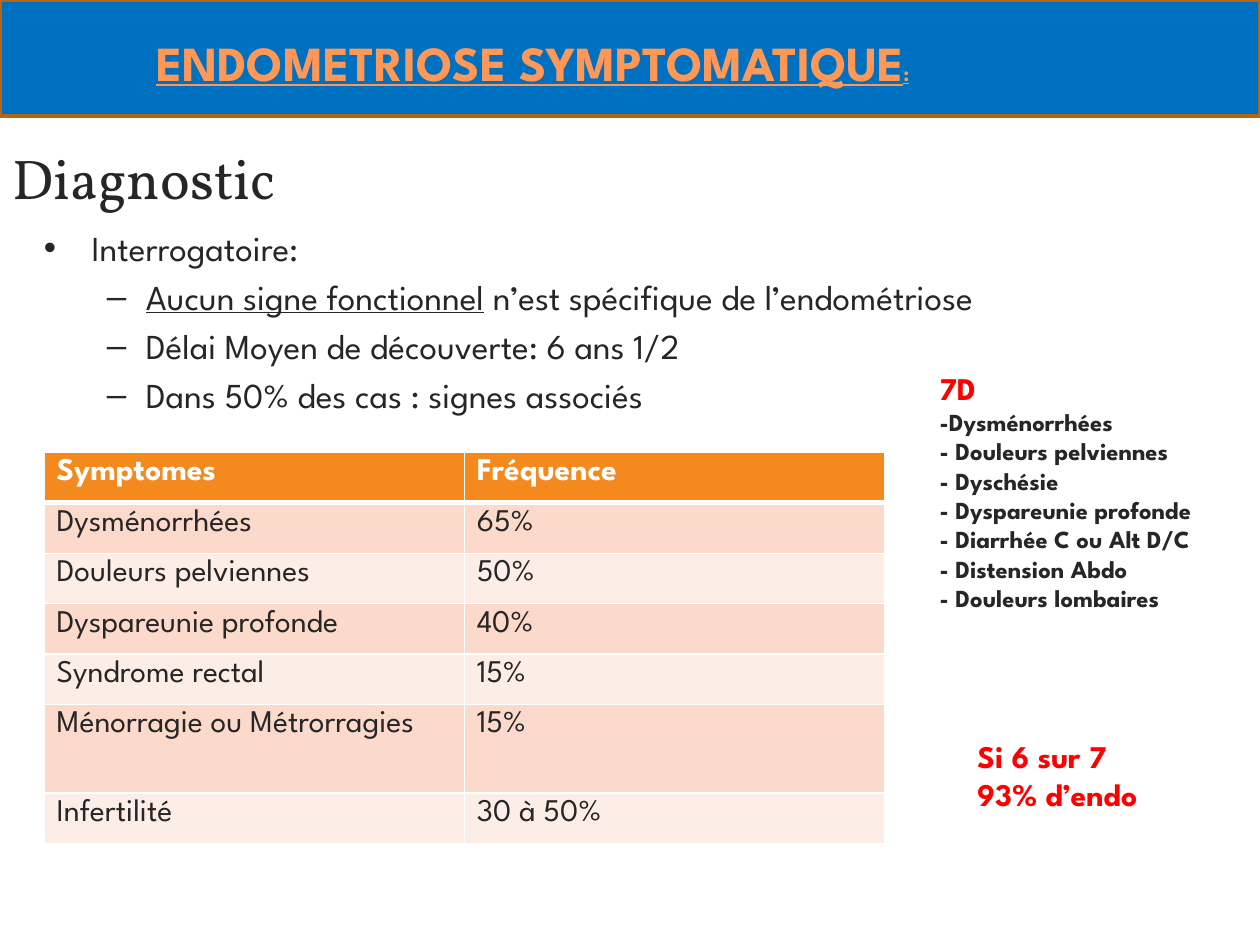
from lxml import etree
from pptx import Presentation
from pptx.dml.color import RGBColor
from pptx.enum import shapes, text
from pptx.oxml import ns
from pptx.util import Inches, Pt

COLORS = {
    "ink": "262626", "white": "FFFFFF", "red": "FF0000", "bar": "0070C0",
    "bar_line": "B56516", "heading": "FF9856", "head_row": "F4891E",
    "odd_row": "FBDACC", "even_row": "FDEDE7",
}
SANS, SERIF = "League Spartan", "Vollkorn"


def rgb(name):
    return RGBColor.from_string(COLORS[name])


def add_run(p, words, size, color="ink", bold=False, underline=False, font=SANS):
    r = p.add_run()
    r.text = words
    r.font.name = font
    r.font.size = Pt(size)
    r.font.bold = bold
    r.font.underline = underline
    r.font.color.rgb = rgb(color)


def add_text(s, box, wrap=True):
    tf = s.shapes.add_textbox(*map(Inches, box)).text_frame
    tf.word_wrap = wrap
    return tf


def paragraphs(tf, items):
    for i, item in enumerate(items):
        yield (tf.add_paragraph() if i else tf.paragraphs[0]), item


def set_bullet(p, char, margin, indent):
    pPr = p._p.get_or_add_pPr()
    pPr.set("marL", str(Inches(margin)))
    pPr.set("indent", str(Inches(indent)))
    etree.SubElement(pPr, ns.qn("a:buFont")).set("typeface", "Arial")
    etree.SubElement(pPr, ns.qn("a:buChar")).set("char", char)


def set_borders(cell, widths):
    tcPr = cell._tc.get_or_add_tcPr()
    for side, width in zip("LRTB", widths):
        ln = etree.SubElement(tcPr, ns.qn(f"a:ln{side}"), w=str(Pt(width)))
        fill = etree.SubElement(ln, ns.qn("a:solidFill"))
        etree.SubElement(fill, ns.qn("a:srgbClr"), val=COLORS["white"])


def add_title(s, box):
    title = s.shapes.title
    title.left, title.top, title.width, title.height = map(Inches, box)
    tf = title.text_frame
    tf.vertical_anchor = text.MSO_ANCHOR.MIDDLE
    p = tf.paragraphs[0]
    p.alignment = text.PP_ALIGN.LEFT
    add_run(p, "Diagnostic", 32, font=SERIF)


def add_header(s, box):
    left, top, width, height = box
    bar = s.shapes.add_shape(shapes.MSO_SHAPE.RECTANGLE, *map(Inches, box))
    bar.shadow.inherit = False
    bar.fill.solid()
    bar.fill.fore_color.rgb = rgb("bar")
    bar.line.color.rgb = rgb("bar_line")
    bar.line.width = Pt(2)
    tf = add_text(s, (left + 1.14, top + 0.21, 6.52, 0.57), wrap=False)
    p = tf.paragraphs[0]
    add_run(p, "ENDOMETRIOSE SYMPTOMATIQUE", 28, "heading", True, True)
    add_run(p, ":", 12, "heading", True, True)


def add_history(s, box):
    points = [
        (0, [("Interrogatoire:", False)]),
        (1, [("Aucun signe fonctionnel", True),
             (" n’est spécifique de l’endométriose", False)]),
        (1, [("Délai Moyen de découverte: 6 ans 1/2", False)]),
        (1, [("Dans 50% des cas : signes associés", False)]),
    ]
    bullets = [("•", 0.38, -0.38), ("–", 0.81, -0.31)]
    for p, (level, runs) in paragraphs(add_text(s, box), points):
        p.level = level
        set_bullet(p, *bullets[level])
        if level:
            p.space_before = Pt(4)
        for words, underline in runs:
            add_run(p, words, 20, underline=underline)


def add_symptom_table(s, box):
    rows = [
        ("Symptomes", "Fréquence"),
        ("Dysménorrhées", "65%"),
        ("Douleurs pelviennes", "50%"),
        ("Dyspareunie profonde", "40%"),
        ("Syndrome rectal", "15%"),
        ("Ménorragie ou Métrorragies", "15%"),
        ("Infertilité", "30 à 50%"),
    ]
    table = s.shapes.add_table(len(rows), 2, *map(Inches, box)).table
    for i, row in enumerate(rows):
        head = i == 0
        table.rows[i].height = Inches(0.7 if i == 5 else 0.4)
        fill = "head_row" if head else "odd_row" if i % 2 else "even_row"
        for cell, words in zip(table.rows[i].cells, row):
            set_borders(cell, (1, 1, 3 if i == 1 else 1, 3 if head else 1))
            cell.fill.solid()
            cell.fill.fore_color.rgb = rgb(fill)
            add_run(cell.text_frame.paragraphs[0], words, 18,
                    "white" if head else "ink", head)


def add_seven_d(s, box):
    lines = ["7D", "-Dysménorrhées", "- Douleurs pelviennes", "- Dyschésie",
             "- Dyspareunie profonde", "- Diarrhée C ou Alt D/C",
             "- Distension Abdo", "- Douleurs lombaires"]
    for p, words in paragraphs(add_text(s, box), lines):
        size, color = (18, "red") if words == "7D" else (14, "ink")
        add_run(p, words, size, color, True)


def add_conclusion(s, box):
    lines = ["Si 6 sur 7", "93% d’endo"]
    for p, words in paragraphs(add_text(s, box, wrap=False), lines):
        add_run(p, words, 18, "red", True)


def main():
    prs = Presentation()
    prs.slide_width, prs.slide_height = Inches(10), Inches(7.5)
    s = prs.slides.add_slide(prs.slide_layouts[5])
    add_title(s, (0, 0.99, 2.95, 0.83))
    add_history(s, (0.25, 1.75, 9.5, 1.75))
    add_header(s, (0, 0, 10, 0.92))
    add_symptom_table(s, (0.35, 3.59, 6.67, 3.13))
    add_seven_d(s, (7.36, 2.88, 2.6, 2.36))
    add_conclusion(s, (7.66, 5.8, 1.67, 0.71))
    prs.save("out.pptx")


if __name__ == "__main__":
    main()
